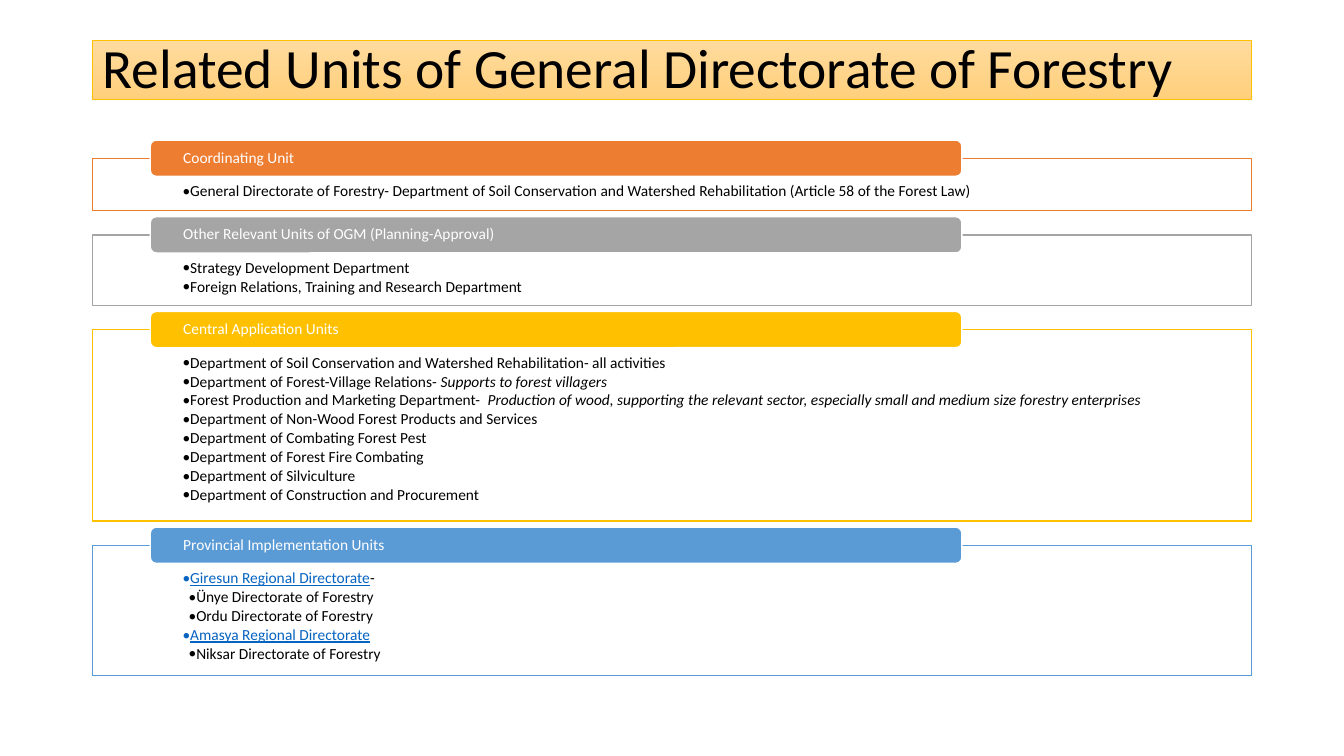
from dataclasses import dataclass

from lxml.etree import SubElement
from pptx import Presentation
from pptx.dml.color import RGBColor as Rgb
from pptx.enum.shapes import MSO_SHAPE as Shape
from pptx.enum.text import MSO_ANCHOR as Anchor, MSO_AUTO_SIZE as AutoSize, PP_ALIGN as Align
from pptx.oxml.ns import qn
from pptx.util import Inches, Pt


@dataclass(frozen=True)
class Theme:
    font: str = "Calibri"
    title_size: float = 39.6
    body_size: float = 11
    ink: str = "000000"
    paper: str = "FFFFFF"
    link: str = "0563C1"
    title_top: str = "FFDB9E"
    title_bottom: str = "FFD07C"
    coordinating: str = "ED7D31"
    planning: str = "A5A5A5"
    central: str = "FFC000"
    provincial: str = "5B9BD5"


THEME = Theme()
LEFT, WIDTH = 0.92, 11.49
FIRST_PANEL_TOP, PANEL_GAP = 1.57, 0.24
HEADER_RISE = 0.18
INDENT = 0.06

UNITS = [
    ("Coordinating Unit", THEME.coordinating, 0.52, [
        (1, [("General Directorate of Forestry- Department of Soil Conservation and "
              "Watershed Rehabilitation (Article 58 of the Forest Law)", "plain")]),
    ]),
    ("Other Relevant Units of OGM (Planning-Approval)", THEME.planning, 0.7, [
        (1, [("Strategy Development Department", "plain")]),
        (1, [("Foreign Relations, Training and Research Department", "plain")]),
    ]),
    ("Central Application Units", THEME.central, 1.9, [
        (1, [("Department of Soil Conservation and Watershed Rehabilitation- all activities", "plain")]),
        (1, [("Department of Forest-Village Relations- ", "plain"),
             ("Supports to forest villagers", "italic")]),
        (1, [("Forest Production and Marketing Department-  ", "plain"),
             ("Production of wood, supporting the relevant sector, especially small "
              "and medium size forestry enterprises", "italic")]),
        (1, [("Department of Non-Wood Forest Products and Services", "plain")]),
        (1, [("Department of Combating Forest Pest", "plain")]),
        (1, [("Department of Forest Fire Combating", "plain")]),
        (1, [("Department of Silviculture", "plain")]),
        (1, [("Department of Construction and Procurement", "plain")]),
    ]),
    ("Provincial Implementation Units", THEME.provincial, 1.29, [
        (1, [("Giresun Regional Directorate", "link"), ("-", "plain")]),
        (2, [("Ünye Directorate of Forestry", "plain")]),
        (2, [("Ordu Directorate of Forestry", "plain")]),
        (1, [("Amasya Regional Directorate", "link")]),
        (2, [("Niksar Directorate of Forestry", "plain")]),
    ]),
]


class UnitSlide:
    def __init__(self, slide, theme):
        self.slide = slide
        self.theme = theme

    def format_paragraph(self, paragraph, size, color):
        paragraph.alignment = Align.LEFT
        paragraph.line_spacing = 0.9
        paragraph.font.name = self.theme.font
        paragraph.font.size = Pt(size)
        paragraph.font.color.rgb = Rgb.from_string(color)

    def title(self, wording):
        title = self.slide.shapes.title
        title.left, title.top = Inches(LEFT), Inches(0.4)
        title.width, title.height = Inches(WIDTH), Inches(0.59)
        title.fill.gradient()
        title.fill.gradient_angle = 270
        for stop, color in zip(title.fill.gradient_stops, (self.theme.title_top, self.theme.title_bottom)):
            stop.color.rgb = Rgb.from_string(color)
        title.line.color.rgb = Rgb.from_string(self.theme.central)
        title.line.width = Pt(0.5)
        frame = title.text_frame
        frame.text = wording
        frame.auto_size = AutoSize.NONE
        frame.vertical_anchor = Anchor.MIDDLE
        self.format_paragraph(frame.paragraphs[0], self.theme.title_size, self.theme.ink)

    def box(self, kind, left, top, width, height, fill, line, insets, anchor):
        box = self.slide.shapes.add_shape(kind, Inches(left), Inches(top), Inches(width), Inches(height))
        box.shadow.inherit = False
        box.fill.solid()
        box.fill.fore_color.rgb = Rgb.from_string(fill)
        box.line.color.rgb = Rgb.from_string(line)
        box.line.width = Pt(1)
        frame = box.text_frame
        frame.word_wrap = True
        frame.vertical_anchor = anchor
        side, above, below = map(Inches, insets)
        frame.margin_left = frame.margin_right = side
        frame.margin_top, frame.margin_bottom = above, below
        return box

    def header(self, wording, top, color):
        header = self.box(Shape.ROUNDED_RECTANGLE, 1.49, top, 8.05, 0.36,
                          color, self.theme.paper, (0.31, 0, 0), Anchor.MIDDLE)
        header.text_frame.text = wording
        self.format_paragraph(header.text_frame.paragraphs[0], self.theme.body_size, self.theme.paper)

    def panel(self, top, height, color, bullets):
        panel = self.box(Shape.RECTANGLE, LEFT, top, WIDTH, height,
                         self.theme.paper, color, (0.89, 0.25, 0.09), Anchor.TOP)
        paper = panel.fill._xPr.find(qn("a:solidFill"))[0]
        SubElement(paper, qn("a:alpha"), val="90000")
        frame = panel.text_frame
        for number, (level, runs) in enumerate(bullets):
            paragraph = frame.add_paragraph() if number else frame.paragraphs[0]
            self.bullet(paragraph, level, runs)

    def bullet(self, paragraph, level, runs):
        paragraph.level = level
        paragraph.space_after = Pt(1.65)
        properties = paragraph._p.get_or_add_pPr()
        properties.set("marL", str(Inches(INDENT * level)))
        properties.set("indent", str(-Inches(INDENT)))
        SubElement(properties, qn("a:buFont"), typeface=self.theme.font)
        SubElement(properties, qn("a:buChar"), char="•")
        self.format_paragraph(paragraph, self.theme.body_size, self.theme.ink)
        for wording, style in runs:
            run = paragraph.add_run()
            run.text = wording
            if style == "italic":
                run.font.italic = True
            elif style == "link":
                run.font.underline = True
                run.font.color.rgb = Rgb.from_string(self.theme.link)


def main():
    deck = Presentation()
    deck.slide_width, deck.slide_height = Inches(13.33), Inches(7.5)
    page = UnitSlide(deck.slides.add_slide(deck.slide_layouts[5]), THEME)
    page.title("Related Units of General Directorate of Forestry")
    top = FIRST_PANEL_TOP
    for heading, color, height, bullets in UNITS:
        page.panel(top, height, color, bullets)
        page.header(heading, top - HEADER_RISE, color)
        top += height + PANEL_GAP
    deck.save("out.pptx")


if __name__ == "__main__":
    main()
